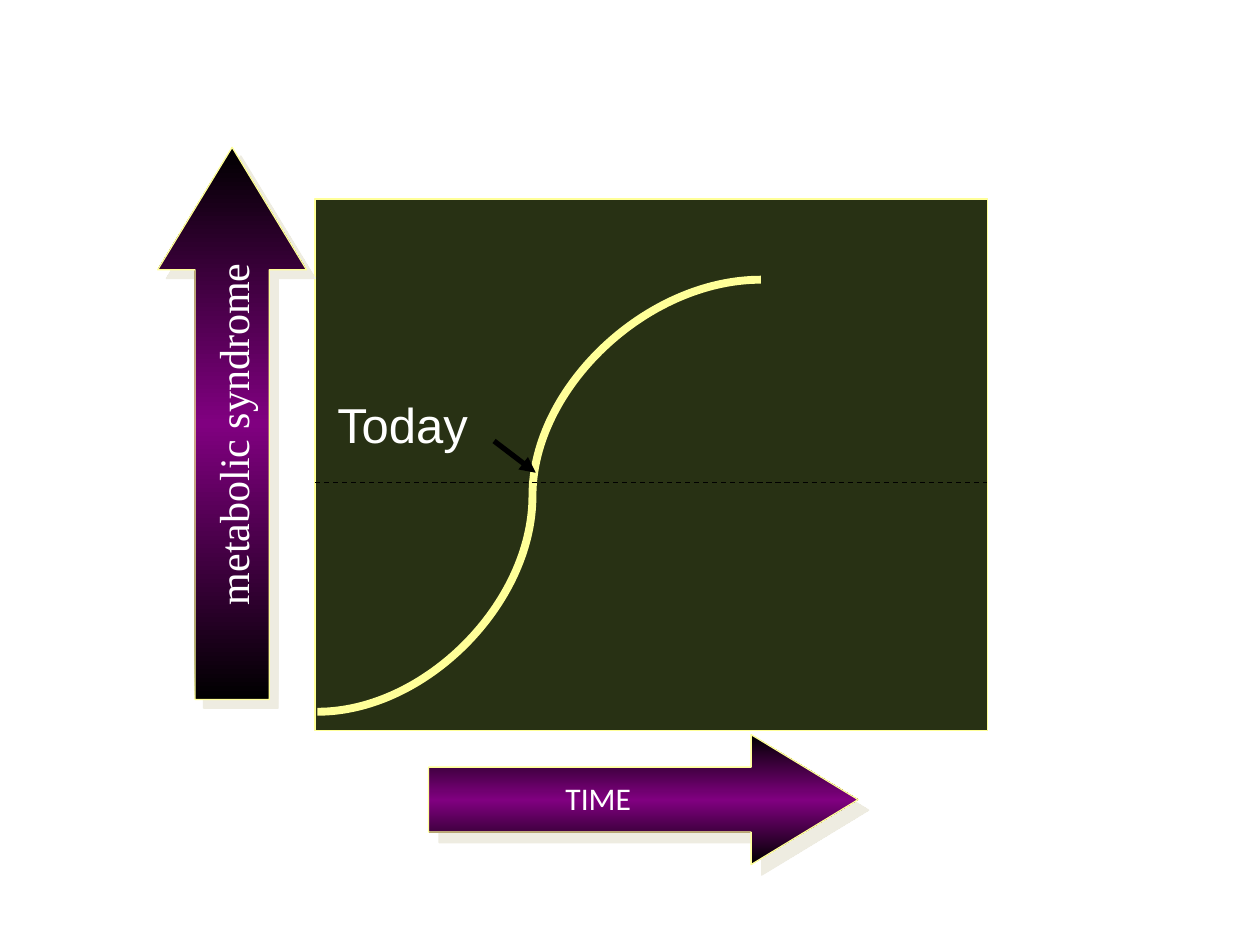
from lxml.etree import SubElement
from pptx import Presentation
from pptx.dml.color import RGBColor
from pptx.enum.dml import MSO_LINE
from pptx.enum.shapes import MSO_CONNECTOR, MSO_SHAPE
from pptx.enum.text import MSO_ANCHOR, PP_ALIGN
from pptx.oxml import parse_xml
from pptx.oxml.ns import nsdecls, qn
from pptx.util import Cm, Pt

BLACK = RGBColor(0x00, 0x00, 0x00)
WHITE = RGBColor(0xFF, 0xFF, 0xFF)
OLIVE = RGBColor(0x28, 0x31, 0x14)
YELLOW = RGBColor(0xFF, 0xFF, 0x99)
PURPLE = RGBColor(0x80, 0x00, 0x80)
CREAM = RGBColor(0xEE, 0xEC, 0xE1)


class SlideBuilder:
    """Draws on one page; all lengths are centimetres."""

    def __init__(self, page):
        self.page = page

    def shape(self, kind, left, top, width, height, parent=None):
        shapes = (parent or self.page).shapes
        box = shapes.add_shape(kind, Cm(left), Cm(top), Cm(width), Cm(height))
        box.shadow.inherit = False
        box.line.color.rgb = YELLOW
        box.line.width = Pt(0.75)
        return box

    def panel(self, left, top, width, height):
        box = self.shape(MSO_SHAPE.RECTANGLE, left, top, width, height)
        box.fill.solid()
        box.fill.fore_color.rgb = OLIVE

    def axis_arrow(self, group, kind, left, top, width, height, shadow_distance):
        """Block arrow, black to purple to black, with an offset shadow."""
        arrow = self.shape(kind, left, top, width, height, group)
        arrow.adjustments[0] = 0.5
        arrow.adjustments[1] = 0.823
        stops = "".join(
            f'<a:gs pos="{position}"><a:srgbClr val="{color}"/></a:gs>'
            for position, color in ((0, BLACK), (50000, PURPLE), (100000, BLACK)))
        properties = arrow._element.spPr
        properties.find(qn("a:prstGeom")).addnext(parse_xml(
            f'<a:gradFill {nsdecls("a")} rotWithShape="1"><a:gsLst>{stops}</a:gsLst>'
            '<a:lin ang="5400000" scaled="1"/></a:gradFill>'))
        properties.find(qn("a:effectLst")).append(parse_xml(
            f'<a:outerShdw {nsdecls("a")} dist="{Pt(shadow_distance)}" dir="2700000" '
            f'algn="ctr" rotWithShape="0"><a:srgbClr val="{CREAM}"/></a:outerShdw>'))

    def text(self, text, left, top, width, height, font, size, parent=None,
             anchor=MSO_ANCHOR.TOP, wrap=True):
        shapes = (parent or self.page).shapes
        box = shapes.add_textbox(Cm(left), Cm(top), Cm(width), Cm(height))
        box.text_frame.word_wrap = wrap
        box.text_frame.vertical_anchor = anchor
        para = box.text_frame.paragraphs[0]
        para.text = text
        para.font.name = font
        para.font.size = Pt(size)
        para.font.color.rgb = WHITE
        return box

    def connector(self, kind, start, end, color, width):
        line = self.page.shapes.add_connector(
            kind, Cm(start[0]), Cm(start[1]), Cm(end[0]), Cm(end[1]))
        line.line.color.rgb = color
        line.line.width = Pt(width)
        SubElement(line._element.spPr, qn("a:effectLst"))
        return line

    def growth_curve(self, start, end, bend):
        """S-curve whose turning point lies at the fraction bend of its width."""
        curve = self.connector(MSO_CONNECTOR.CURVE, start, end, YELLOW, 4.5)
        guides = curve._element.spPr.find(qn("a:prstGeom")).get_or_add_avLst()
        SubElement(guides, qn("a:gd"), name="adj1", fmla=f"val {round(bend * 100000)}")

    def dashed_line(self, start, end):
        line = self.connector(MSO_CONNECTOR.STRAIGHT, start, end, BLACK, 0.75)
        line.line.dash_style = MSO_LINE.DASH

    def pointer(self, start, end):
        line = self.connector(MSO_CONNECTOR.STRAIGHT, start, end, BLACK, 3)
        SubElement(line.line._get_or_add_ln(), qn("a:tailEnd"), type="triangle")


def main():
    deck = Presentation()
    deck.slide_width, deck.slide_height = Cm(25.4), Cm(19.05)
    page = deck.slides.add_slide(deck.slide_layouts[6])
    builder = SlideBuilder(page)

    builder.panel(6.35, 4.01, 13.56, 10.72)
    builder.growth_curve((6.4, 14.35), (15.34, 5.64), bend=0.485)

    time_axis = page.shapes.add_group_shape()
    builder.axis_arrow(time_axis, MSO_SHAPE.RIGHT_ARROW, 8.64, 14.81, 8.66, 2.62, 8.5)
    builder.text("TIME", 11.15, 15.57, 2.08, 1.02, "Calibri", 18, time_axis,
                 MSO_ANCHOR.MIDDLE, wrap=False)

    syndrome_axis = page.shapes.add_group_shape()
    builder.axis_arrow(syndrome_axis, MSO_SHAPE.UP_ARROW, 3.18, 2.97, 3, 11.13, 7.1)
    label = builder.text("metabolic syndrome", -0.08, 8.43, 9.53, 1.27,
                         "Times New Roman", 24, syndrome_axis, MSO_ANCHOR.MIDDLE)
    label.rotation = 270
    label.text_frame.margin_left = Cm(0.87)
    label.text_frame.paragraphs[0].alignment = PP_ALIGN.CENTER

    builder.dashed_line((6.35, 9.73), (19.89, 9.73))
    builder.text("Today", 6.55, 7.82, 3.81, 1.45, "Arial", 28)
    builder.pointer((9.96, 8.89), (10.8, 9.53))

    deck.save("out.pptx")


if __name__ == "__main__":
    main()
